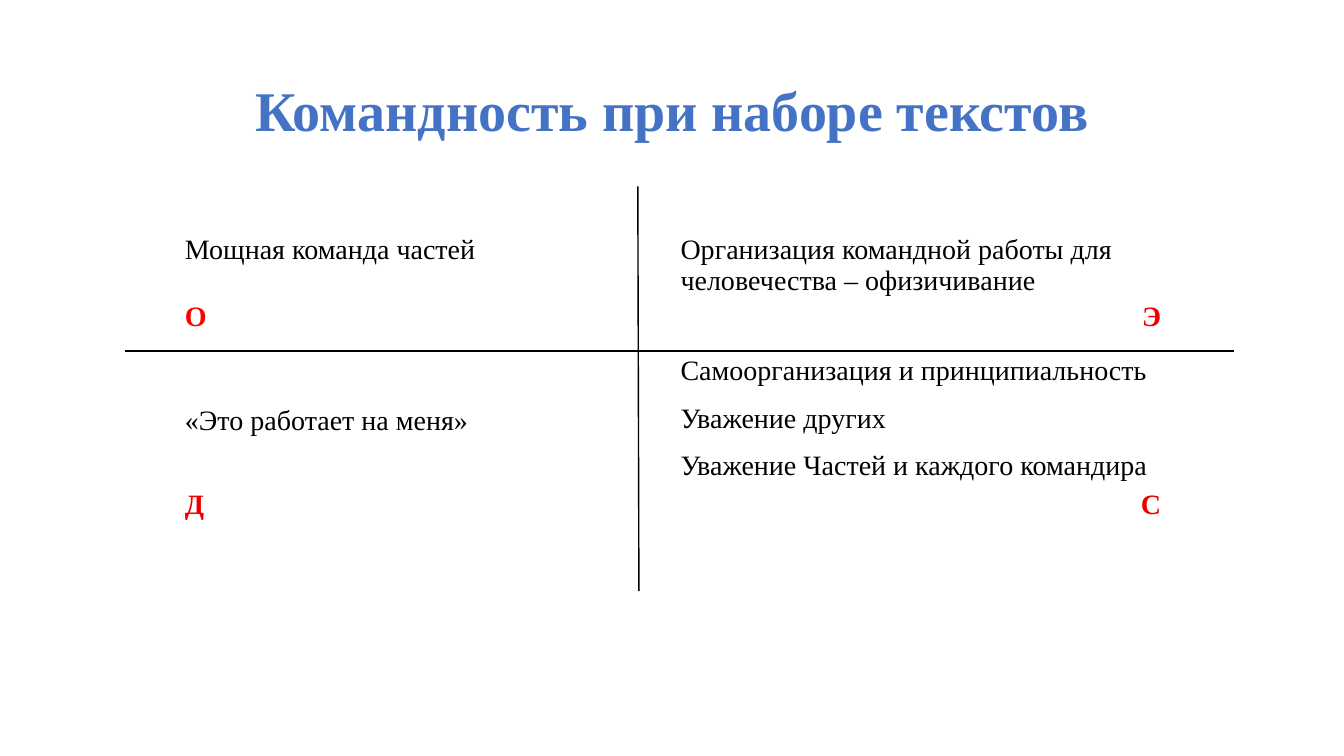
from pptx import Presentation
from pptx.dml.color import RGBColor
from pptx.enum.shapes import MSO_CONNECTOR
from pptx.enum.text import MSO_ANCHOR, PP_ALIGN
from pptx.oxml.ns import qn
from pptx.util import Pt

LEFT, CENTER, RIGHT = PP_ALIGN.LEFT, PP_ALIGN.CENTER, PP_ALIGN.RIGHT
MIDDLE = MSO_ANCHOR.MIDDLE
STRAIGHT = MSO_CONNECTOR.STRAIGHT

BLUE = RGBColor(0x44, 0x72, 0xC4)
BLACK = RGBColor(0x00, 0x00, 0x00)
RED = RGBColor(0xEE, 0x00, 0x00)
BRIGHT_RED = RGBColor(0xFF, 0x00, 0x00)
FONT = "Times New Roman"

# Content
TITLE = "Командность при наборе текстов"
BODY = {"size": Pt(20), "bold": False}
LETTER = {"size": Pt(20), "bold": True}
# Each row: height, then cells of (paragraphs, top margin, alignment, format, colour)
ROWS = [
    (78.5, [
        (["Мощная команда частей"], 34.2, LEFT, BODY, BLACK),
        (["Организация командной работы для человечества – офизичивание"],
         34.2, LEFT, BODY, BLACK),
    ]),
    (38.2, [
        (["О"], 0, LEFT, LETTER, BRIGHT_RED),
        (["Э"], 0, RIGHT, LETTER, RED),
    ]),
    (90.6, [
        (["«Это работает на меня»"], 36.2, LEFT, BODY, BLACK),
        (["Самоорганизация и принципиальность",
          "Уважение других",
          "Уважение Частей и каждого командира"], 0, LEFT, BODY, BLACK),
    ]),
    (71.3, [
        (["Д"], 0, LEFT, LETTER, RED),
        (["С"], 0, RIGHT, LETTER, RED),
    ]),
]
TABLE_LEFT, TABLE_TOP, COLUMN_WIDTH = 126.7, 133.2, 354
AXES = [(455.6, 133.2, 456.4, 422.3), (881.3, 250.8, 89.3, 250.8)]


def write(frame, lines, align, style, colour):
    """Fill a text frame, one paragraph for each line."""
    for index, line in enumerate(lines):
        para = frame.paragraphs[0] if index == 0 else frame.add_paragraph()
        para.alignment = align
        if index:
            para.space_before = Pt(6)
        if index < len(lines) - 1:
            para.space_after = Pt(6)
        span = para.add_run()
        span.text = line
        for name, value in {"name": FONT, **style}.items():
            setattr(span.font, name, value)
        span.font.color.rgb = colour


deck = Presentation()
deck.slide_width, deck.slide_height = Pt(960), Pt(540)
page = deck.slides.add_slide(deck.slide_layouts[6])

# Title
box = page.shapes.add_textbox(Pt(66), Pt(28.75), Pt(828), Pt(104.4))
box.text_frame.word_wrap = True
box.text_frame.vertical_anchor = MIDDLE
write(box.text_frame, [TITLE], CENTER, {"size": Pt(40), "bold": True}, BLUE)
box.text_frame.paragraphs[0].line_spacing = 0.9

# Table of four quadrants
table_height = sum(height for height, _ in ROWS)
table = page.shapes.add_table(
    len(ROWS), 2, Pt(TABLE_LEFT), Pt(TABLE_TOP),
    Pt(2 * COLUMN_WIDTH), Pt(table_height)).table
table.first_row = table.horz_banding = False
for column in table.columns:
    column.width = Pt(COLUMN_WIDTH)
for row, (height, cells) in zip(table.rows, ROWS):
    row.height = Pt(height)
    for cell, (lines, top, align, style, colour) in zip(row.cells, cells):
        cell.fill.background()
        margins = {"left": 5.4, "top": top, "right": 5.4, "bottom": 0}
        for side, margin in margins.items():
            setattr(cell, f"margin_{side}", Pt(margin))
        write(cell.text_frame, lines, align, style, colour)

# Crossing axes
for ends in AXES:
    axis = page.shapes.add_connector(STRAIGHT, *map(Pt, ends))
    axis.line.color.rgb = BLACK
    axis.line.width = Pt(1)
    properties = axis._element.spPr
    properties.append(properties.makeelement(qn("a:effectLst"), {}))

deck.save("out.pptx")
